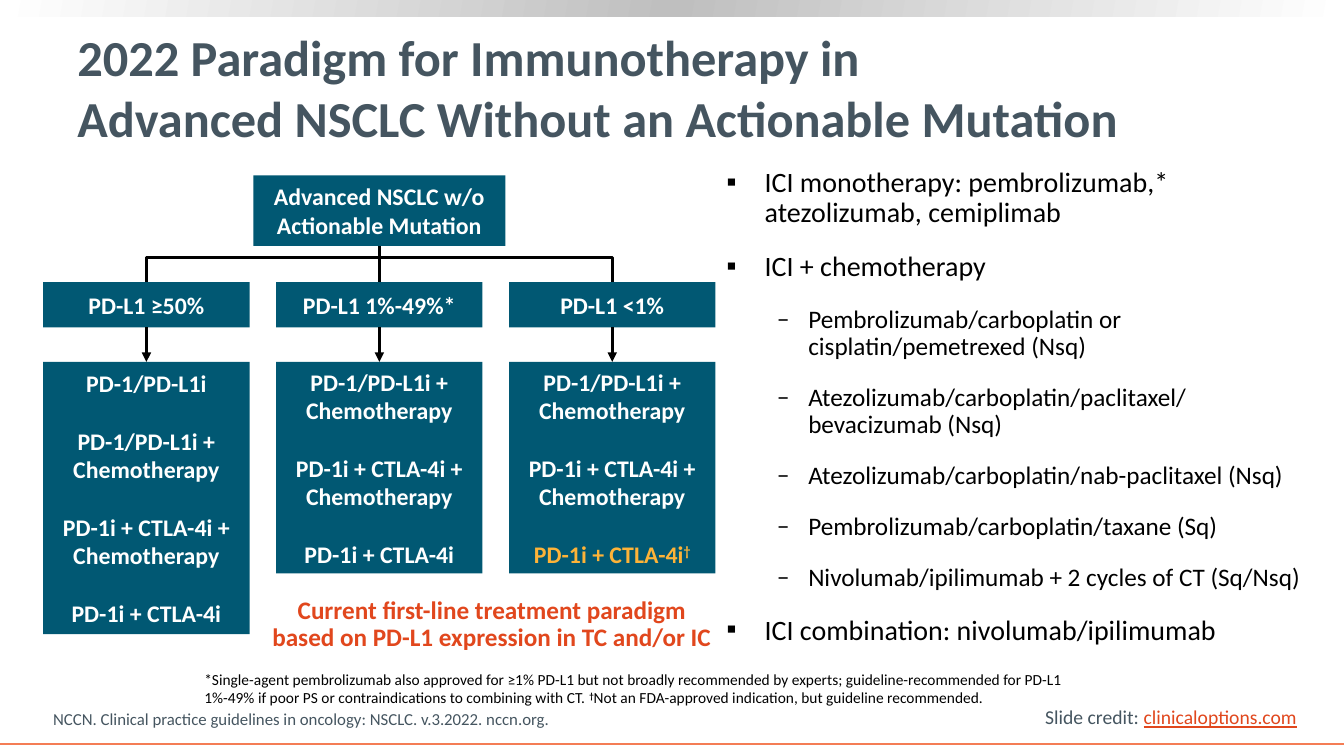
from copy import deepcopy
from dataclasses import dataclass

from lxml import etree
from pptx import Presentation
from pptx.dml.color import RGBColor
from pptx.enum.shapes import MSO_CONNECTOR, MSO_SHAPE
from pptx.enum.text import MSO_ANCHOR, PP_ALIGN
from pptx.oxml.ns import qn
from pptx.util import Cm, Pt

RECTANGLE = MSO_SHAPE.RECTANGLE
STRAIGHT = MSO_CONNECTOR.STRAIGHT
TOP, MIDDLE, BOTTOM = MSO_ANCHOR.TOP, MSO_ANCHOR.MIDDLE, MSO_ANCHOR.BOTTOM
LEFT, CENTER = PP_ALIGN.LEFT, PP_ALIGN.CENTER
TOP_SIDE, BOTTOM_SIDE = 0, 2


@dataclass(frozen=True)
class Theme:
    font: str = "Calibri"
    slate: str = "455560"
    black: str = "000000"
    white: str = "FFFFFF"
    silver: str = "BFBFBF"
    teal: str = "015873"
    amber: str = "FDB338"
    red: str = "E1471D"
    orange: str = "F47D55"
    title: float = 36
    bullet: float = 20
    detail: float = 18
    node: float = 17
    credit: float = 14
    source: float = 12
    footnote: float = 11
    rule: float = 1.5
    link: float = 2.25
    spacing: float = 0.9
    list_gap: float = 17
    node_gap: float = 20.7


@dataclass(frozen=True)
class Span:
    text: str
    color: str = ""
    raised: bool = False
    bold: bool = False
    underline: bool = False


class SlideBuilder:
    def __init__(self, page, theme):
        self.page = page
        self.theme = theme

    def add_spans(self, para, content, size, color, bold=False):
        spans = [Span(content)] if isinstance(content, str) else content
        for span in spans:
            for number, line in enumerate(span.text.split("\n")):
                if number:
                    para.add_line_break()
                run = para.add_run()
                run.text = line
                run.font.name = self.theme.font
                run.font.size = Pt(size)
                run.font.bold = bold or span.bold
                run.font.color.rgb = RGBColor.from_string(span.color or color)
                if span.underline:
                    run.font.underline = True
                if span.raised:
                    run.font._element.set("baseline", "30000")

    def text(self, left, top, width, height, content, size, color, bold=False,
             anchor=TOP, align=LEFT, spacing=1.0, wrap=True):
        box = self.page.shapes.add_textbox(Cm(left), Cm(top), Cm(width), Cm(height))
        frame = box.text_frame
        frame.word_wrap = wrap
        frame.vertical_anchor = anchor
        para = frame.paragraphs[0]
        para.alignment = align
        para.line_spacing = spacing
        self.add_spans(para, content, size, color, bold)

    def rectangle(self, left, top, width, height):
        box = self.page.shapes.add_shape(RECTANGLE, Cm(left), Cm(top), Cm(width), Cm(height))
        box.shadow.inherit = False
        box.line.fill.background()
        return box

    def node(self, left, top, width, height, items):
        box = self.rectangle(left, top, width, height)
        box.fill.solid()
        box.fill.fore_color.rgb = RGBColor.from_string(self.theme.teal)
        frame = box.text_frame
        frame.word_wrap = True
        frame.vertical_anchor = MIDDLE
        for number, item in enumerate(items):
            para = frame.add_paragraph() if number else frame.paragraphs[0]
            para.alignment = CENTER
            if number:
                para.space_before = Pt(self.theme.node_gap)
            self.add_spans(para, item, self.theme.node, self.theme.white, True)
        return box

    def band(self, left, top, width, height, colors):
        box = self.rectangle(left, top, width, height)
        box.fill.gradient()
        box.fill.gradient_angle = 170
        stops = box._element.spPr.find(".//" + qn("a:gsLst"))
        stops.append(deepcopy(stops[0]))
        for number, stop in enumerate(box.fill.gradient_stops):
            stop.position = number / (len(colors) - 1)
            stop.color.rgb = RGBColor.from_string(colors[number])

    def line(self, x1, y1, x2, y2, color, weight):
        connector = self.page.shapes.add_connector(STRAIGHT, Cm(x1), Cm(y1), Cm(x2), Cm(y2))
        connector.line.color.rgb = RGBColor.from_string(color)
        connector.line.width = Pt(weight)
        etree.SubElement(connector._element.spPr, qn("a:effectLst"))
        return connector

    def join(self, upper, lower, arrow=False):
        connector = self.line(0, 0, 1, 1, self.theme.black, self.theme.link)
        connector.begin_connect(upper, BOTTOM_SIDE)
        connector.end_connect(lower, TOP_SIDE)
        if arrow:
            outline = connector.get_or_add_ln()
            etree.SubElement(outline, qn("a:tailEnd"), type="triangle")

    def bracket(self, left, right, top, bottom):
        builder = self.page.shapes.build_freeform(Cm(left), Cm(bottom))
        corners = [(left, top), (right, top), (right, bottom)]
        builder.add_line_segments([(Cm(x), Cm(y)) for x, y in corners], close=False)
        shape = builder.convert_to_shape()
        shape.shadow.inherit = False
        shape.fill.background()
        shape.line.color.rgb = RGBColor.from_string(self.theme.black)
        shape.line.width = Pt(self.theme.link)

    def bullets(self, left, top, width, height, items):
        theme = self.theme
        levels = [("▪", 0.96, 0.96, theme.bullet), ("‒", 2.06, 0.79, theme.detail)]
        box = self.page.shapes.add_textbox(Cm(left), Cm(top), Cm(width), Cm(height))
        frame = box.text_frame
        frame.word_wrap = True
        for number, (level, content) in enumerate(items):
            mark, margin, hanging, size = levels[level]
            para = frame.add_paragraph() if number else frame.paragraphs[0]
            para.level = level
            para.line_spacing = theme.spacing
            if number:
                para.space_before = Pt(theme.list_gap)
            properties = para._p.get_or_add_pPr()
            properties.set("marL", str(Cm(margin)))
            properties.set("indent", str(-Cm(hanging)))
            tint = etree.SubElement(properties, qn("a:buClr"))
            etree.SubElement(tint, qn("a:srgbClr"), val=theme.black)
            etree.SubElement(properties, qn("a:buFont"), typeface=theme.font)
            etree.SubElement(properties, qn("a:buChar"), char=mark)
            self.add_spans(para, content, size, theme.black)


def build_tree(builder):
    theme = builder.theme
    first, step, width = 1.09, 5.87, 5.2
    centers = [first + step * column + width / 2 for column in range(3)]
    combined = ["PD-1/PD-L1i + Chemotherapy", "PD-1i + CTLA-4i + Chemotherapy"]
    dual = "PD-1i + CTLA-4i"
    unapproved = [Span(dual, theme.amber), Span("†", theme.amber, raised=True)]
    columns = [
        ("PD-L1 ≥50%", 6.86, ["PD-1/PD-L1i", *combined, dual]),
        ("PD-L1 1%-49%*", 5.33, [*combined, dual]),
        ("PD-L1 <1%", 5.33, [*combined, unapproved]),
    ]
    builder.bracket(centers[0], centers[-1], 6.5, 7.11)
    root = builder.node(centers[1] - 3.175, 4.42, 6.35, 1.78,
                        ["Advanced NSCLC w/o Actionable Mutation"])
    for center, (label, height, options) in zip(centers, columns):
        left = center - width / 2
        group = builder.node(left, 7.11, width, 1.14, [label])
        treatment = builder.node(left, 9.12, width, height, options)
        builder.join(group, treatment, arrow=True)
        if center == centers[1]:
            builder.join(root, group)


def main():
    deck = Presentation()
    deck.slide_width, deck.slide_height = Cm(33.87), Cm(19.05)
    theme = Theme()
    builder = SlideBuilder(deck.slides.add_slide(deck.slide_layouts[6]), theme)
    builder.band(0, 0, 33.87, 0.41, [theme.white, theme.silver, theme.white])
    builder.line(0, 18.75, 33.87, 18.75, theme.orange, theme.rule)
    builder.text(26.09, 17.65, 6.91, 0.86,
                 [Span("Slide credit: "), Span("clinicaloptions.com", theme.red, underline=True)],
                 theme.credit, theme.slate, wrap=False)
    builder.text(1.7, 0.66, 30.2, 3.07,
                 "2022 Paradigm for Immunotherapy in\nAdvanced NSCLC Without an Actionable Mutation",
                 theme.title, theme.slate, bold=True, anchor=MIDDLE)
    builder.bullets(18.06, 4.11, 15.42, 12.78, [
        (0, "ICI monotherapy: pembrolizumab,* atezolizumab, cemiplimab"),
        (0, "ICI + chemotherapy"),
        (1, "Pembrolizumab/carboplatin or cisplatin/pemetrexed (Nsq)"),
        (1, "Atezolizumab/carboplatin/paclitaxel/\nbevacizumab (Nsq)"),
        (1, "Atezolizumab/carboplatin/nab-paclitaxel (Nsq)"),
        (1, "Pembrolizumab/carboplatin/taxane (Sq)"),
        (1, "Nivolumab/ipilimumab + 2 cycles of CT (Sq/Nsq)"),
        (0, "ICI combination: nivolumab/ipilimumab"),
    ])
    builder.text(1.09, 17.78, 19.48, 0.71,
                 "NCCN. Clinical practice guidelines in oncology: NSCLC. v.3.2022. nccn.org.",
                 theme.source, theme.slate, anchor=BOTTOM, spacing=theme.spacing)
    build_tree(builder)
    builder.text(4.9, 16.76, 22.81, 1.19, [
        Span("*Single-agent pembrolizumab also approved for ≥1% PD-L1 but not broadly recommended "
             "by experts; guideline-recommended for PD-L1\n"
             "1%-49% if poor PS or contraindications to combining with CT. "),
        Span("†", raised=True, bold=True),
        Span("Not an FDA-approved indication, but guideline recommended."),
    ], theme.footnote, theme.black)
    builder.text(6.53, 14.99, 11.73, 1.52,
                 "Current first-line treatment paradigm based on PD-L1 expression in TC and/or IC",
                 theme.detail, theme.red, bold=True, anchor=MIDDLE, align=CENTER,
                 spacing=theme.spacing)
    deck.save("out.pptx")


if __name__ == "__main__":
    main()
